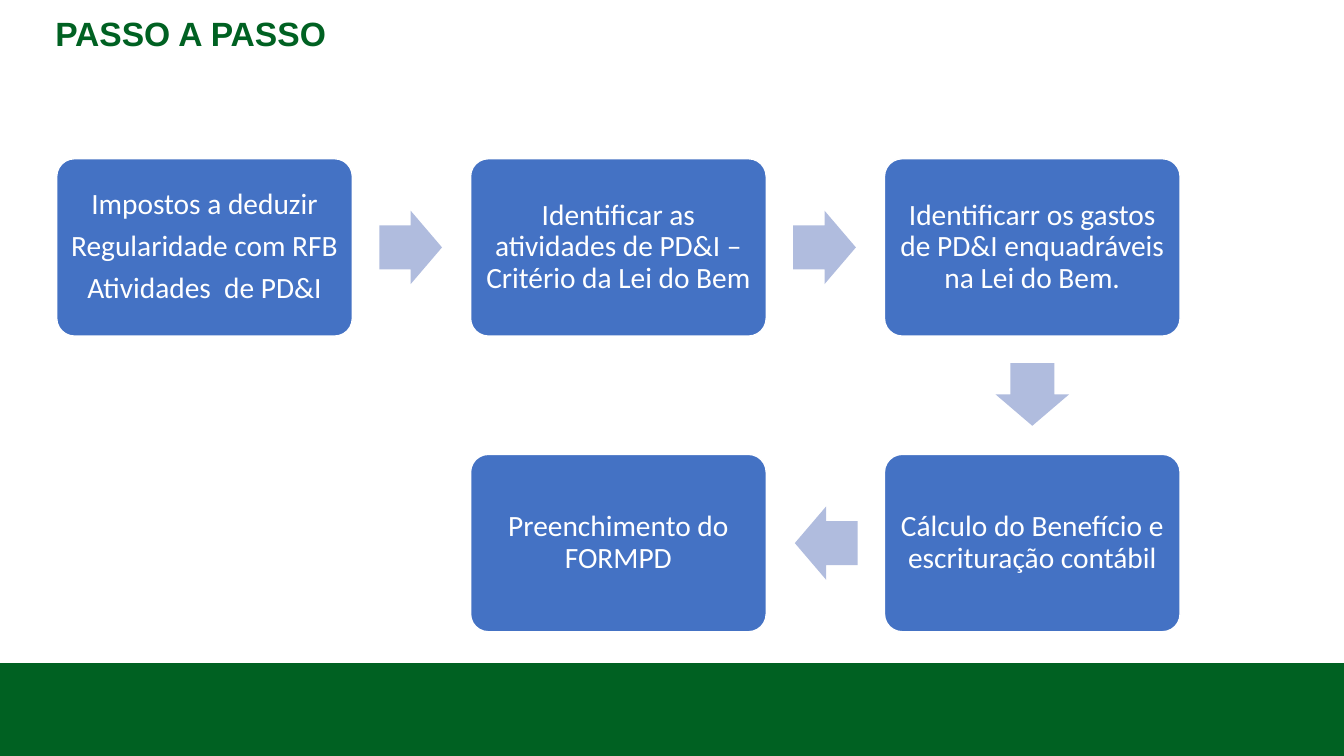
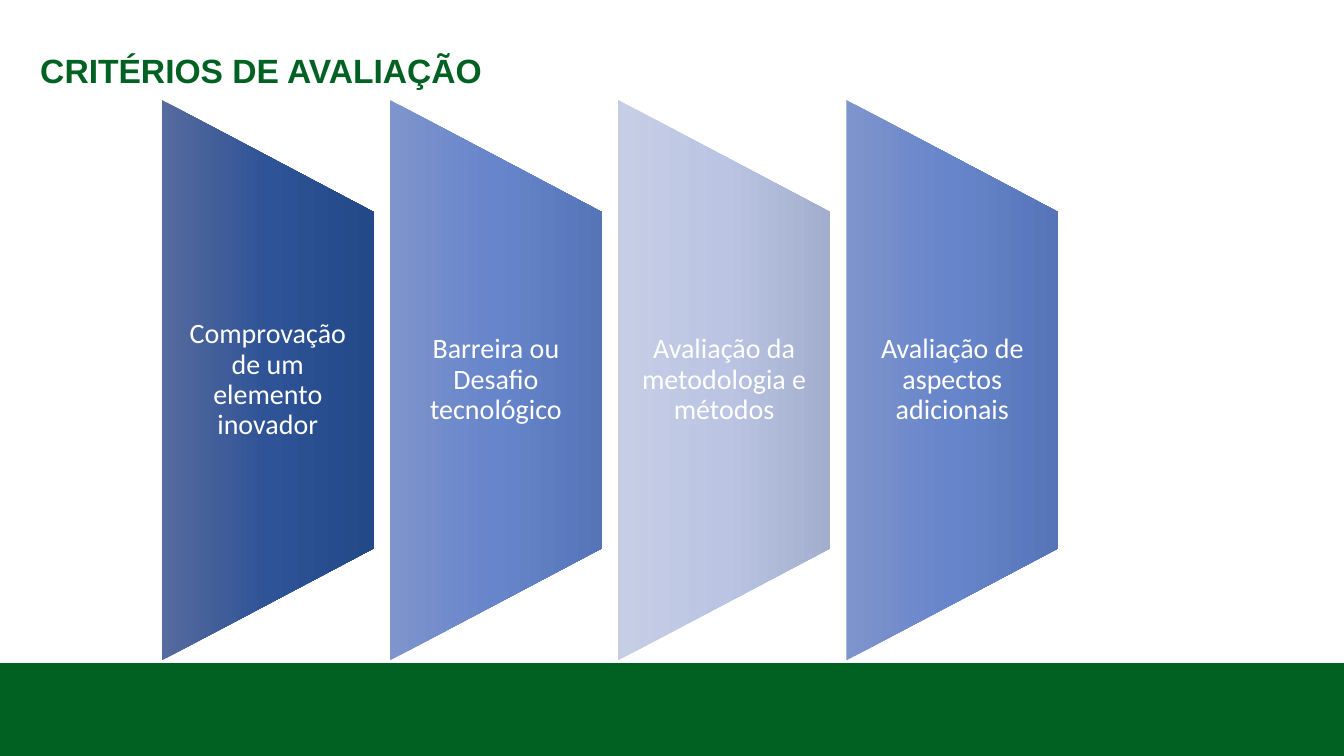
from copy import deepcopy
from dataclasses import dataclass
from itertools import pairwise
from math import atan2, degrees

from pptx import Presentation
from pptx.dml.color import RGBColor as Rgb
from pptx.enum.shapes import MSO_SHAPE as Kind
from pptx.enum.text import MSO_ANCHOR as Anchor, MSO_AUTO_SIZE as Auto, PP_ALIGN as Align
from pptx.oxml.ns import qn
from pptx.slide import Slide
from pptx.util import Cm, Pt

COLORS = {"green": "006122", "blue": "4472C4", "arrow": "B0BCDE", "white": "FFFFFF"}
SHADES = {
    "navy": ("566B9E", "2E5396", "244989"),
    "mid": ("7E94CC", "6785CA", "5674B8"),
    "pale": ("C6CEE6", "BBC5E3", "A3ADCD"),
}
WIDE, HIGH = 33.87, 19.05

# Flow grid, in cm
LEFT, TOP = 1.43, 4.0
COL, ROW = 10.43, 7.45
BOX_W, BOX_H = 7.45, 4.47
TIP_W, TIP_H, GAP = 1.58, 1.85, 0.68

# Panel row, in cm
START, STEP, MIDDLE = 4.08, 5.75, 9.58
PANEL_W, PANEL_H, TEXT_H = 5.34, 14.12, 8.46


@dataclass
class Stage:
    col: int
    row: int
    lines: tuple[str, ...]

    def center(self) -> tuple[float, float]:
        return LEFT + self.col * COL + BOX_W / 2, TOP + self.row * ROW + BOX_H / 2


@dataclass
class Panel:
    text: str
    shade: str


STAGES = [
    Stage(0, 0, ("Impostos a deduzir", "Regularidade com RFB", "Atividades  de PD&I")),
    Stage(1, 0, ("Identificar as atividades de PD&I – Critério da Lei do Bem",)),
    Stage(2, 0, ("Identificarr os gastos de PD&I enquadráveis na Lei do Bem.",)),
    Stage(2, 1, ("Cálculo do Benefício e escrituração contábil",)),
    Stage(1, 1, ("Preenchimento do FORMPD",)),
]
PANELS = [
    Panel("Comprovação de um elemento inovador", "navy"),
    Panel("Barreira ou Desafio tecnológico", "mid"),
    Panel("Avaliação da metodologia e métodos", "pale"),
    Panel("Avaliação de aspectos adicionais", "mid"),
]


def color(name: str) -> Rgb:
    return Rgb.from_string(COLORS[name])


def frame(x: float, y: float, w: float, h: float) -> tuple:
    """Lengths of a box centred on x, y."""
    return Cm(x - w / 2), Cm(y - h / 2), Cm(w), Cm(h)


def draw(slide: Slide, kind: Kind, area: tuple, fill: str):
    shape = slide.shapes.add_shape(kind, *area)
    shape.shadow.inherit = False
    shape.fill.solid()
    shape.fill.fore_color.rgb = color(fill)
    shape.line.fill.background()
    return shape


def write(shape, lines: tuple[str, ...], size: int, side: float, edge: float) -> None:
    box = shape.text_frame
    box.word_wrap = True
    box.vertical_anchor = Anchor.MIDDLE
    box.margin_left = box.margin_right = Cm(side)
    box.margin_top = box.margin_bottom = Cm(edge)
    for i, line in enumerate(lines):
        para = box.add_paragraph() if i else box.paragraphs[0]
        para.text = line
        para.alignment = Align.CENTER
        para.line_spacing = 0.9
        para.space_after = Pt(size * 0.35)
        para.font.name, para.font.size = "Calibri", Pt(size)
        para.font.color.rgb = color("white")


def blend(shape, shade: str) -> None:
    """Three-stop gradient, top to bottom."""
    fill = shape.fill
    fill.gradient()
    fill.gradient_angle = 270
    stops = next(shape.element.iter(qn("a:gsLst")))
    stops.append(deepcopy(stops[-1]))
    for i, (stop, tone) in enumerate(zip(fill.gradient_stops, SHADES[shade])):
        stop.position = i / 2
        stop.color.rgb = Rgb.from_string(tone)


def head(slide: Slide, text: str, left: float, foot: float = 0.13) -> None:
    title = slide.shapes.title
    title.left, title.top, title.width, title.height = Cm(left), 0, Cm(29.21), Cm(3.68)
    box = title.text_frame
    box.text = text
    box.auto_size = Auto.NONE
    box.vertical_anchor = Anchor.MIDDLE
    box.margin_bottom = Cm(foot)
    para = box.paragraphs[0]
    para.alignment = Align.LEFT
    para.line_spacing = 0.9
    para.font.name, para.font.size, para.font.bold = "Arial", Pt(24), True
    para.font.color.rgb = color("green")


def flow(slide: Slide) -> None:
    for stage in STAGES:
        box = draw(slide, Kind.ROUNDED_RECTANGLE, frame(*stage.center(), BOX_W, BOX_H), "blue")
        box.adjustments[0] = 0.1
        box.line.color.rgb = color("white")
        box.line.width = Pt(1)
        write(box, stage.lines, 21, 0.2, 0.23)
    for here, after in pairwise(STAGES):
        dx, dy = after.col - here.col, after.row - here.row
        x, y = here.center()
        reach = GAP + TIP_W / 2
        x += dx * (BOX_W / 2 + reach)
        y += dy * (BOX_H / 2 + reach)
        tip = draw(slide, Kind.RIGHT_ARROW, frame(x, y, TIP_W, TIP_H), "arrow")
        tip.adjustments[0], tip.adjustments[1] = 0.6, 0.5
        tip.rotation = degrees(atan2(dy, dx))


def fan(slide: Slide) -> None:
    for i, panel in enumerate(PANELS):
        x = START + i * STEP + PANEL_W / 2
        area = frame(x, MIDDLE, PANEL_H, PANEL_W)
        shape = draw(slide, Kind.FLOWCHART_MANUAL_OPERATION, area, "blue")
        shape.rotation = 270
        blend(shape, panel.shade)
        label = slide.shapes.add_textbox(*frame(x, MIDDLE, PANEL_W, TEXT_H))
        write(label, (panel.text,), 20, 0.36, 0)


def main() -> None:
    deck = Presentation()
    deck.slide_width, deck.slide_height = Cm(WIDE), Cm(HIGH)
    plan = deck.slide_layouts[5]

    # Step by step
    first = deck.slides.add_slide(plan)
    head(first, "PASSO A PASSO", 1.14, 2.02)
    flow(first)

    # Green band, shared through the master
    band = draw(first, Kind.RECTANGLE, (0, Cm(16.71), Cm(WIDE), Cm(HIGH - 16.71)), "green")
    deck.slide_master.shapes.element.insert(2, band.element)

    # Criteria
    second = deck.slides.add_slide(plan)
    head(second, "CRITÉRIOS DE AVALIAÇÃO", 0.76)
    fan(second)

    deck.save("out.pptx")


if __name__ == "__main__":
    main()
